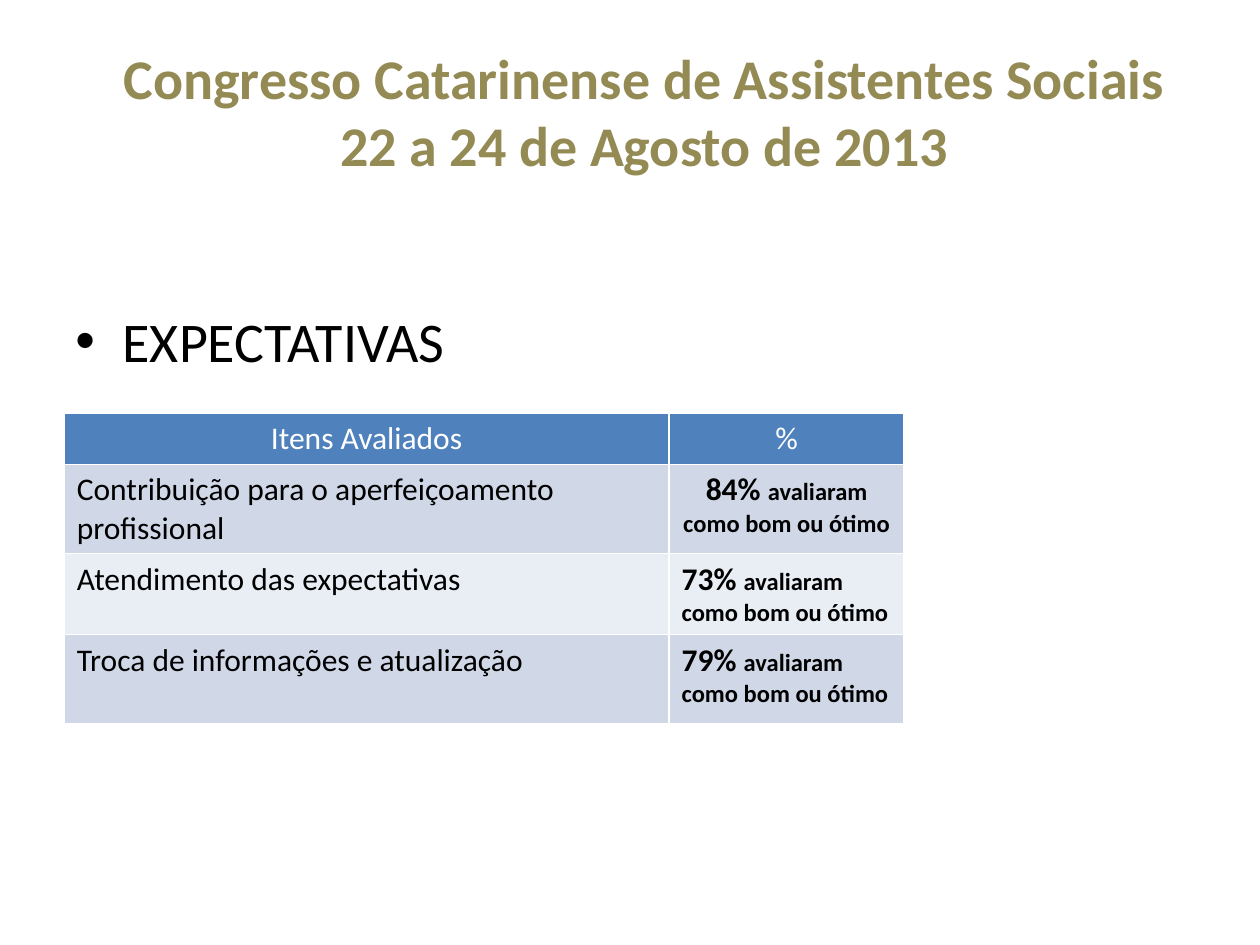
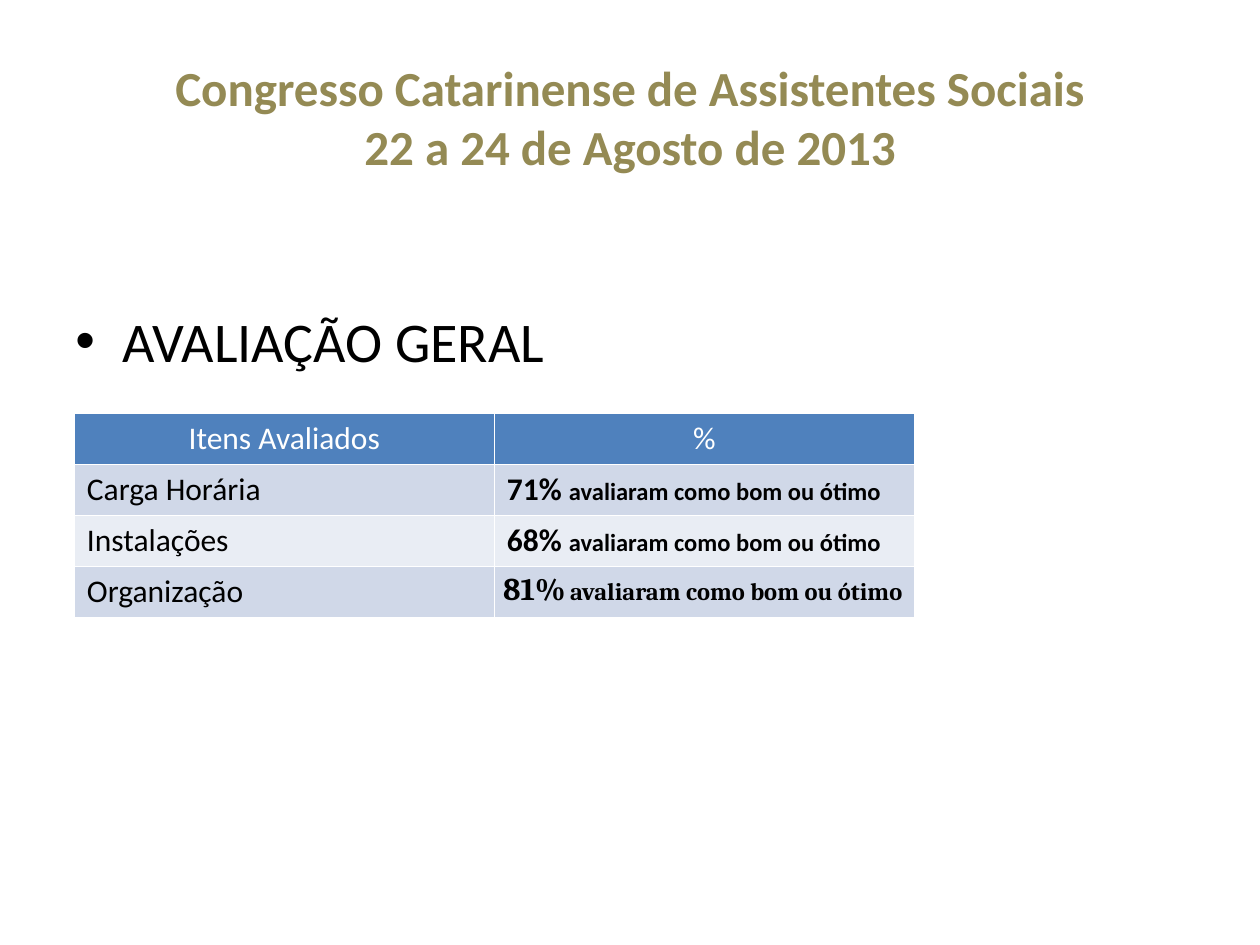
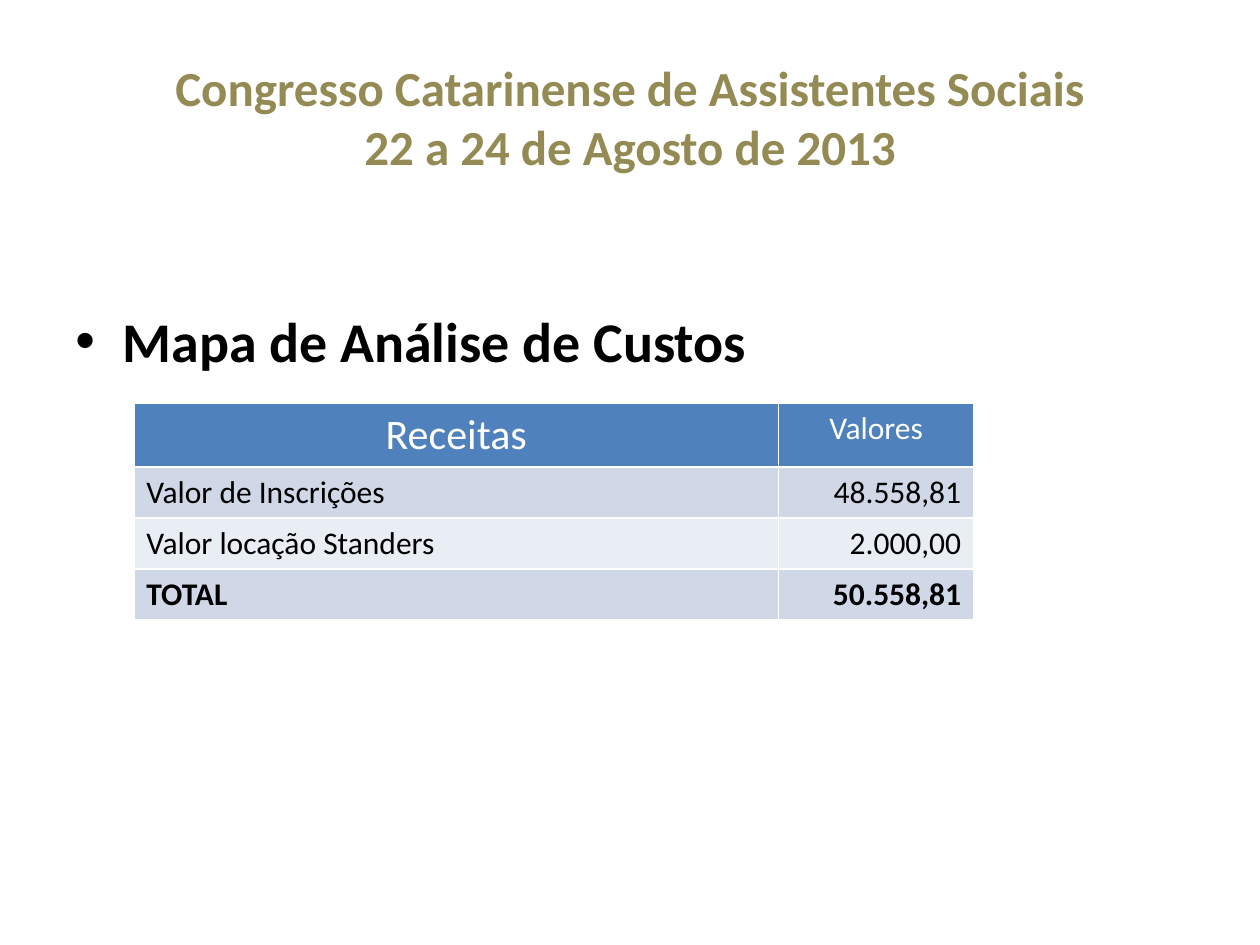
from pptx import Presentation
from pptx.dml.color import RGBColor
from pptx.enum import text
from pptx.oxml import parse_xml
from pptx.oxml.ns import nsdecls
from pptx.util import Pt

GOLD = RGBColor(0x94, 0x8A, 0x54)
BLUE = RGBColor(0x4F, 0x81, 0xBD)
BANDS = RGBColor(0xD0, 0xD8, 0xE8), RGBColor(0xE9, 0xED, 0xF4)
WHITE = RGBColor(255, 255, 255)
BLACK = RGBColor(0, 0, 0)
FONT = "Calibri"
SIDE = text.PP_ALIGN
LEFT, MID, RIGHT, FULL = SIDE.LEFT, SIDE.CENTER, SIDE.RIGHT, SIDE.JUSTIFY

# Content: a run is (text, size, bold, font), a cell is (alignment, runs)
TITLE = "Congresso Catarinense de Assistentes Sociais", "22 a 24 de Agosto de 2013"
GOOD = "avaliaram como bom ou ótimo"


def word(label, side=LEFT, size=18, bold=False):
    return side, [(label, size, bold, FONT)]


def rate(share, side=LEFT):
    return side, [(share + " ", 18, True, FONT), (GOOD, 14, True, FONT)]


HEAD = [word("Itens Avaliados", MID), word("%", MID)]
SERIF = FULL, [("81%", 18, True, "Cambria"), (" ", 11, True, "Cambria"),
               (GOOD, 14, True, "Cambria")]

SLIDES = [
    dict(title=(36.7, 20.9, 663, 85), size=32, topic="EXPECTATIVAS", bold=False,
         at=(36.7, 236.2), cols=(345.6, 134.4), rows=(29.2, 51, 46.3, 51),
         cells=[HEAD,
                [word("Contribuição para o aperfeiçoamento profissional"), rate("84%", MID)],
                [word("Atendimento das expectativas"), rate("73%")],
                [word("Troca de informações e atualização"), rate("79%")]]),
    dict(title=(36, 21.6, 648, 90), size=28, topic="AVALIAÇÃO GERAL", bold=False,
         at=(42.5, 236.2), cols=(240, 240), rows=(29.2,) * 4,
         cells=[HEAD,
                [word("Carga Horária"), rate("71%")],
                [word("Instalações"), rate("68%")],
                [word("Organização"), SERIF]]),
    dict(title=(36, 21.6, 648, 90), size=28, topic="Mapa de Análise de Custos", bold=True,
         at=(76.5, 230.4), cols=(368.5, 111.5), rows=(36.4,) + (29.2,) * 3,
         cells=[[word("Receitas", MID, 24), word("Valores", MID)],
                [word("Valor de Inscrições"), word("48.558,81", RIGHT)],
                [word("Valor locação Standers"), word("2.000,00", RIGHT)],
                [word("TOTAL", bold=True), word("50.558,81", RIGHT, bold=True)]]),
]


def add_run(para, label, size, bold, font, ink):
    run = para.add_run()
    run.text = label
    run.font.size, run.font.bold, run.font.name = Pt(size), bold, font
    run.font.color.rgb = ink


def add_box(slide, place):
    frame = slide.shapes.add_textbox(*map(Pt, place)).text_frame
    frame.word_wrap = True
    return frame


def add_title(slide, place, size):
    frame = add_box(slide, place)
    frame.vertical_anchor = text.MSO_ANCHOR.MIDDLE
    para = frame.paragraphs[0]
    para.alignment = MID
    for i, line in enumerate(TITLE):
        if i:
            para.add_line_break()
        add_run(para, line, size, True, FONT, GOLD)


def add_topic(slide, label, bold):
    frame = add_box(slide, (36, 126, 648, 356.4))
    frame.margin_top = Pt(49)
    para = frame.paragraphs[0]
    props = para._p.get_or_add_pPr()
    props.set("marL", str(Pt(27)))
    props.set("indent", str(-Pt(27)))
    for tag, key, value in (("buFont", "typeface", "Arial"), ("buChar", "char", "•")):
        props.append(parse_xml(f'<a:{tag} {nsdecls("a")} {key}="{value}"/>'))
    add_run(para, label, 32, bold, FONT, BLACK)


def fill_cell(cell, row, side, runs):
    cell.fill.solid()
    cell.fill.fore_color.rgb = BANDS[(row - 1) % 2] if row else BLUE
    para = cell.text_frame.paragraphs[0]
    para.alignment = side
    if side == FULL:
        cell.margin_left = cell.margin_right = Pt(5)
        cell.margin_top = cell.margin_bottom = 0
        para.line_spacing, para.space_after = 1.15, Pt(6)
    for run in runs:
        add_run(para, *run, BLACK if row else WHITE)


def add_grid(slide, at, cols, rows, cells):
    place = *at, sum(cols), sum(rows)
    grid = slide.shapes.add_table(len(rows), len(cols), *map(Pt, place)).table
    for col, width in zip(grid.columns, cols):
        col.width = Pt(width)
    for r, (high, line) in enumerate(zip(rows, cells)):
        grid.rows[r].height = Pt(high)
        for c, (side, runs) in enumerate(line):
            fill_cell(grid.cell(r, c), r, side, runs)


def main():
    deck = Presentation()
    deck.slide_width, deck.slide_height = Pt(720), Pt(540)
    for page in SLIDES:
        slide = deck.slides.add_slide(deck.slide_layouts[6])
        add_title(slide, page["title"], page["size"])
        add_topic(slide, page["topic"], page["bold"])
        add_grid(slide, page["at"], page["cols"], page["rows"], page["cells"])
    deck.save("out.pptx")


if __name__ == "__main__":
    main()
